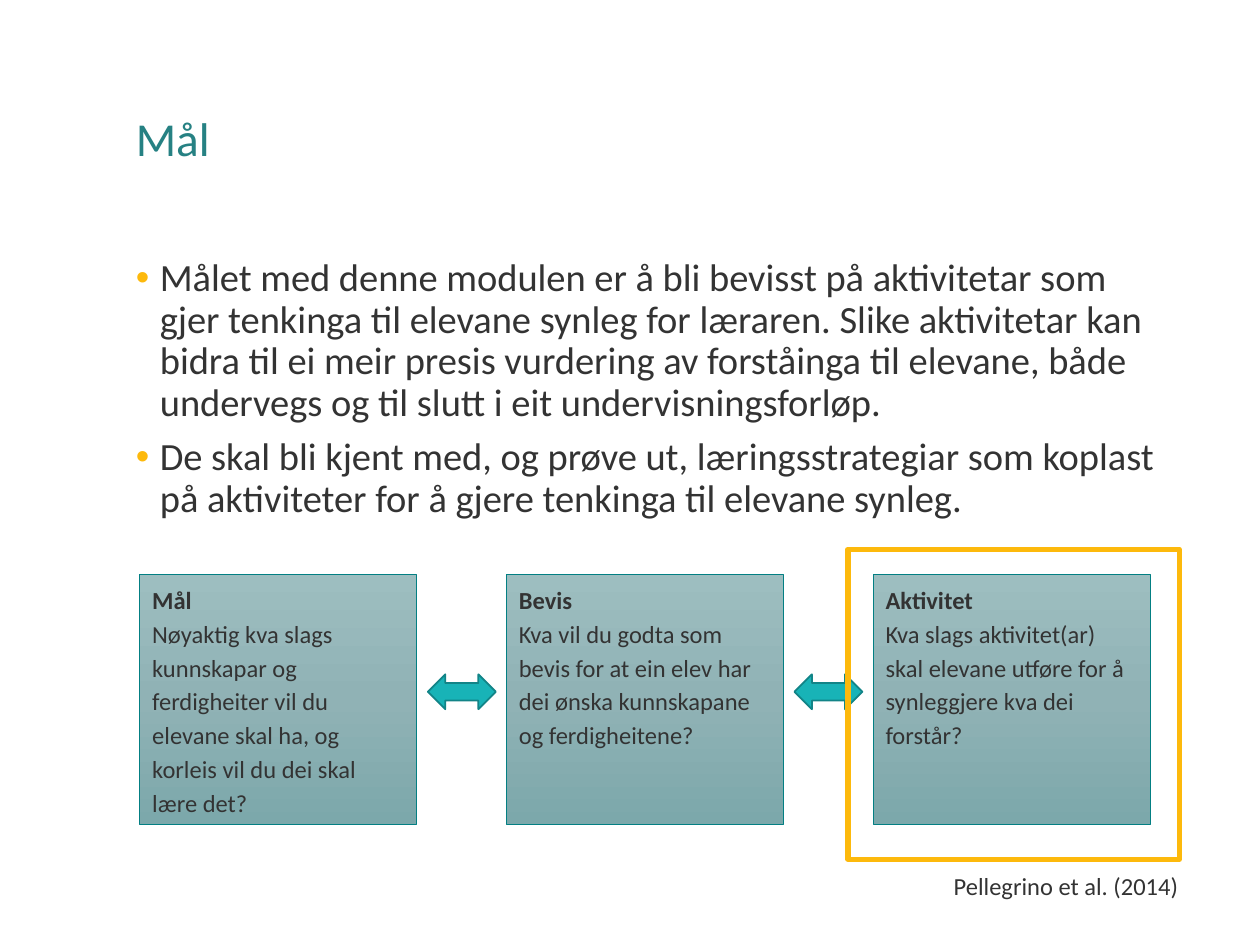
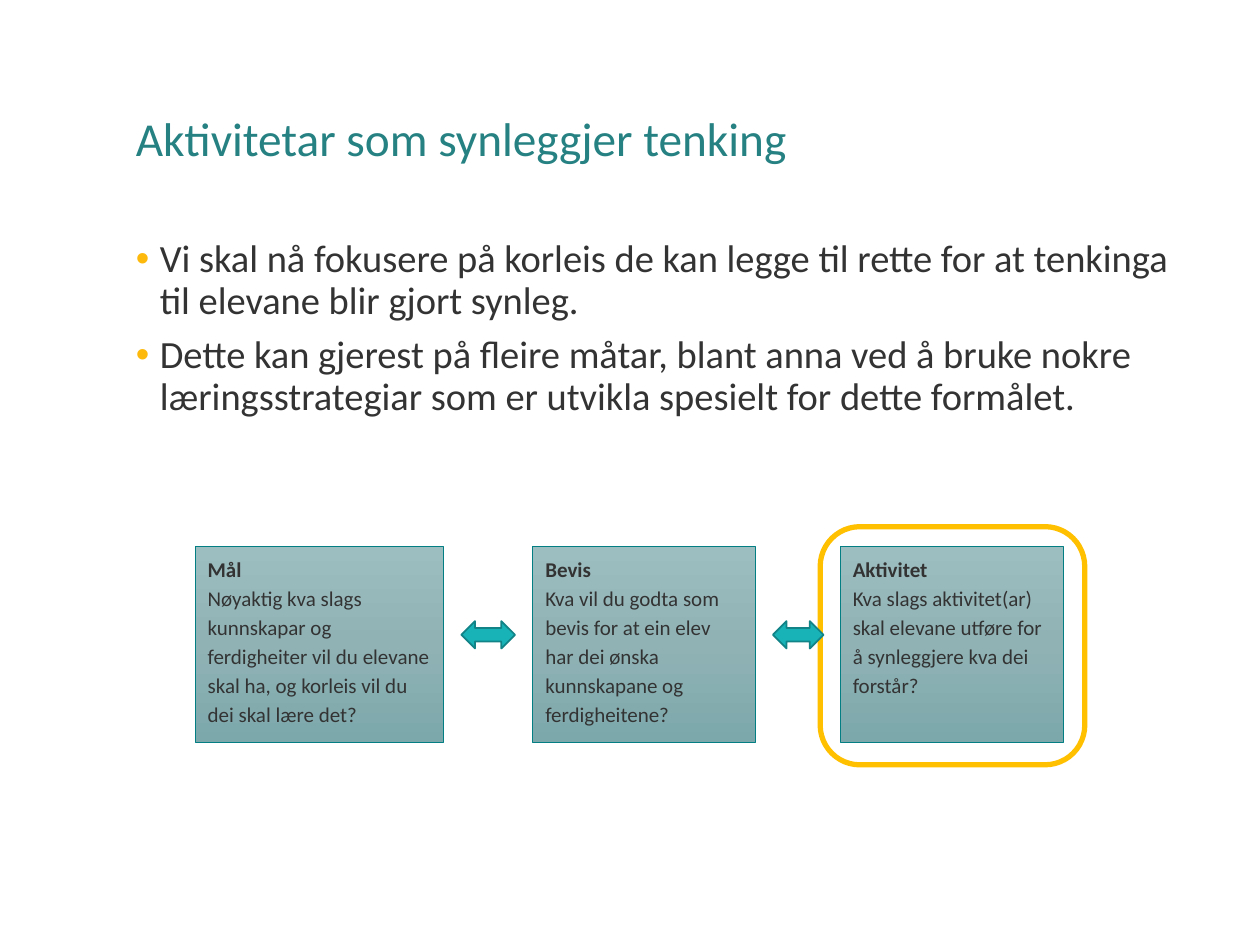
from copy import deepcopy

from lxml import etree
from pptx import Presentation
from pptx.dml.color import RGBColor
from pptx.enum.shapes import MSO_SHAPE
from pptx.enum.text import MSO_ANCHOR, PP_ALIGN
from pptx.oxml.ns import qn
from pptx.util import Inches, Pt

RECTANGLE = MSO_SHAPE.RECTANGLE
ROUNDED = MSO_SHAPE.ROUNDED_RECTANGLE
DOUBLE_ARROW = MSO_SHAPE.LEFT_RIGHT_ARROW
TOP, MIDDLE = MSO_ANCHOR.TOP, MSO_ANCHOR.MIDDLE
LEFT = PP_ALIGN.LEFT

WIDTH, HEIGHT = Inches(10), Inches(7.5)
FONT = "Calibri"
COLORS = {
    "title": "268183",
    "text": "333333",
    "bullet": "FDB90C",
    "box_top": "9DBEC0",
    "box_middle": "90B2B5",
    "box_bottom": "7CA8AB",
    "box_line": "037F83",
    "arrow": "18B3B7",
    "arrow_line": "128487",
    "square_frame": "FDB90C",
    "round_frame": "FFC000",
}
STEPS = [
    ("Mål", "Nøyaktig kva slags kunnskapar og ferdigheiter vil du elevane skal ha, "
            "og korleis vil du dei skal lære det?"),
    ("Bevis", "Kva vil du godta som bevis for at ein elev har dei ønska "
              "kunnskapane og ferdigheitene?"),
    ("Aktivitet", "Kva slags aktivitet(ar) skal elevane utføre for å "
                  "synleggjere kva dei forstår?"),
]


def color(name):
    return RGBColor.from_string(COLORS[name])


def percent_area(left, top, width, height):
    sides = (WIDTH, HEIGHT, WIDTH, HEIGHT)
    return [round(share * side / 100) for share, side in zip((left, top, width, height), sides)]


def style(paragraph, size, color_name="text", bold=False, spacing=1.0):
    paragraph.alignment = LEFT
    paragraph.line_spacing = spacing
    for span in paragraph.runs:
        span.font.name = FONT
        span.font.size = Pt(size)
        span.font.bold = bold
        span.font.color.rgb = color(color_name)


def add_text(page, area, text, size, color_name="text", anchor=TOP, spacing=1.0):
    box = page.shapes.add_textbox(*percent_area(*area))
    frame = box.text_frame
    frame.word_wrap = True
    frame.vertical_anchor = anchor
    frame.text = text
    for paragraph in frame.paragraphs:
        style(paragraph, size, color_name, spacing=spacing)
    return frame


def add_title(page, text):
    add_text(page, (9.8, 5.33, 82.9, 19.33), text, 27, "title", MIDDLE, 0.9)


def add_bullet(paragraph):
    properties = paragraph._p.get_or_add_pPr()
    indent = Inches(0.19)
    properties.set("marL", str(indent))
    properties.set("indent", str(-indent))
    tint = etree.SubElement(properties, qn("a:buClr"))
    etree.SubElement(tint, qn("a:srgbClr"), val=COLORS["bullet"])
    etree.SubElement(properties, qn("a:buFont"), typeface="Arial")
    etree.SubElement(properties, qn("a:buChar"), char="•")


def add_bullets(page, area, lines):
    frame = add_text(page, area, "\n".join(lines), 22, spacing=0.9)
    for number, paragraph in enumerate(frame.paragraphs):
        add_bullet(paragraph)
        if number:
            paragraph.space_before = Pt(7.5)


def add_outlined(page, kind, area, line_name, line_width):
    shape = page.shapes.add_shape(kind, *percent_area(*area))
    shape.shadow.inherit = False
    shape.line.color.rgb = color(line_name)
    shape.line.width = Pt(line_width)
    return shape


def add_frame(page, kind, area, line_name):
    add_outlined(page, kind, area, line_name, 3).fill.background()


def shade_downwards(shape):
    shape.fill.gradient()
    shape.fill.gradient_angle = 270
    stops = shape._element.spPr.find(qn("a:gradFill")).find(qn("a:gsLst"))
    stops.append(deepcopy(stops[-1]))
    names = ("box_top", "box_middle", "box_bottom")
    for stop, name, position in zip(shape.fill.gradient_stops, names, (0, 0.5, 1)):
        stop.color.rgb = color(name)
        stop.position = position


def add_step(page, area, heading, question, size):
    shape = add_outlined(page, RECTANGLE, area, "box_line", 0.5)
    shade_downwards(shape)
    frame = shape.text_frame
    frame.word_wrap = True
    frame.vertical_anchor = TOP
    frame.text = heading + "\n" + question
    for number, paragraph in enumerate(frame.paragraphs):
        style(paragraph, size, bold=number == 0, spacing=1.15)


def add_chain(page, columns, top, height, size, arrow_width, arrow_middle):
    for (left, width), (heading, question) in zip(columns, STEPS):
        add_step(page, (left, top, width, height), heading, question, size)
    arrow_height = 0.14 * height
    arrow_top = top + arrow_middle * height - arrow_height / 2
    for (left, width), (following, _) in zip(columns, columns[1:]):
        start = left + width
        gap = following - start
        area = (start + gap * (1 - arrow_width) / 2, arrow_top, gap * arrow_width, arrow_height)
        arrow = add_outlined(page, DOUBLE_ARROW, area, "arrow_line", 1)
        arrow.fill.solid()
        arrow.fill.fore_color.rgb = color("arrow")


def build_goal(page):
    add_title(page, "Mål")
    add_bullets(page, (9.8, 26.67, 82.9, 60.93), [
        "Målet med denne modulen er å bli bevisst på aktivitetar som gjer tenkinga til "
        "elevane synleg for læraren. Slike aktivitetar kan bidra til ei meir presis "
        "vurdering av forståinga til elevane, både undervegs og til slutt i eit "
        "undervisningsforløp.",
        "De skal bli kjent med, og prøve ut, læringsstrategiar som koplast på "
        "aktiviteter for å gjere tenkinga til elevane synleg.",
    ])
    columns = [(11.1 + 29.1 * number, 22) for number in range(len(STEPS))]
    add_chain(page, columns, 60.8, 26.4, 14, 0.76, 0.47)
    add_frame(page, RECTANGLE, (67.3, 58.13, 26.3, 32.8), "square_frame")
    add_text(page, (74.7, 91.47, 20.2, 4.53), "Pellegrino et al. (2014)", 14)


def build_activities(page):
    add_title(page, "Aktivitetar som synleggjer tenking")
    add_bullets(page, (9.8, 24.67, 85.8, 37.73), [
        "Vi skal nå fokusere på korleis de kan legge til rette for at tenkinga til "
        "elevane blir gjort synleg.",
        "Dette kan gjerest på fleire måtar, blant anna ved å bruke nokre "
        "læringsstrategiar som er utvikla spesielt for dette formålet.",
    ])
    add_frame(page, ROUNDED, (65.1, 55.73, 21, 25.2), "round_frame")
    columns = [(15.5, 19.7), (42.3, 17.7), (66.7, 17.7)]
    add_chain(page, columns, 57.87, 20.67, 12, 0.6, 0.45)


def main():
    deck = Presentation()
    deck.slide_width, deck.slide_height = WIDTH, HEIGHT
    blank = deck.slide_layouts[6]
    for build in (build_goal, build_activities):
        build(deck.slides.add_slide(blank))
    deck.save("out.pptx")


if __name__ == "__main__":
    main()
